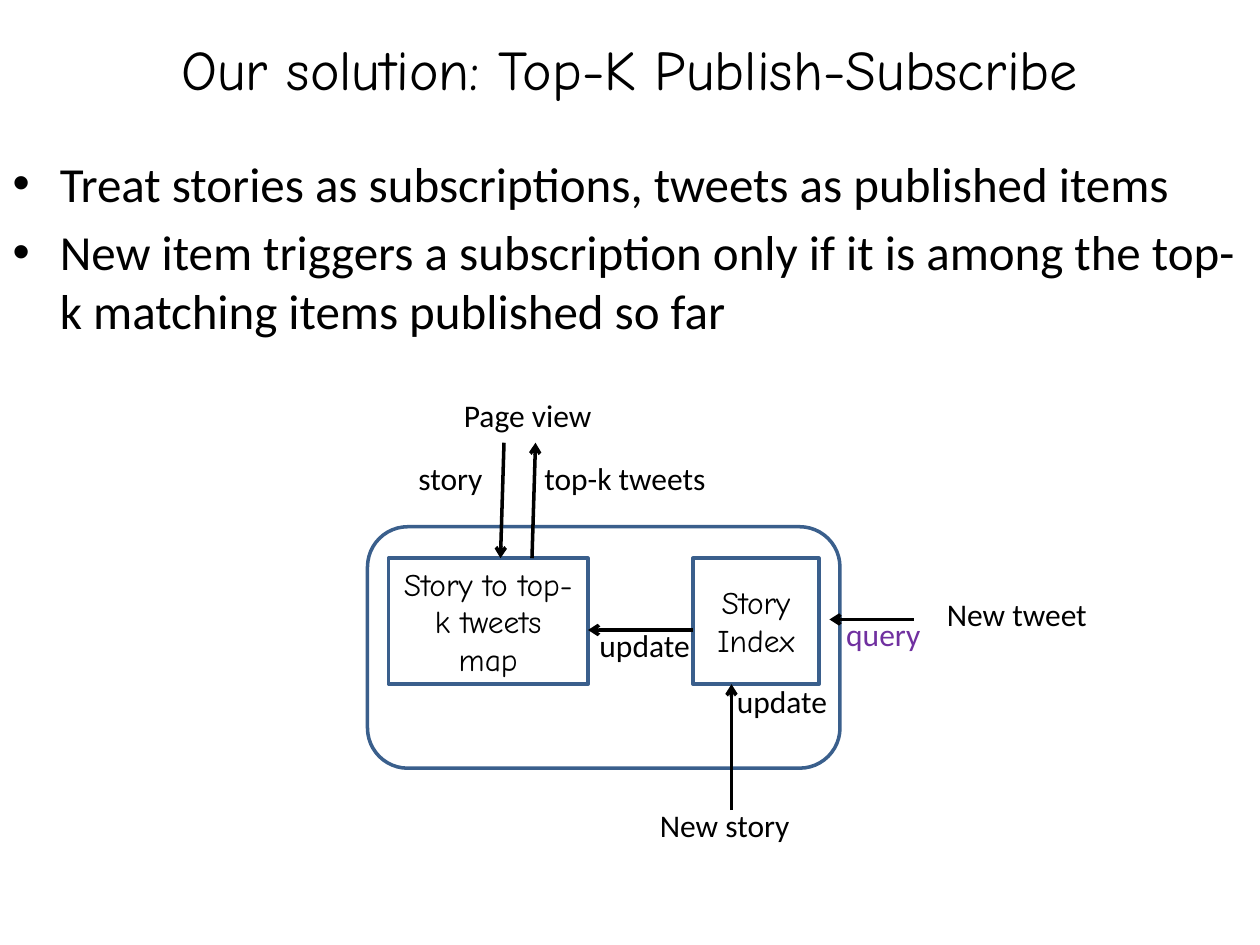
from typing import NamedTuple

from lxml import etree
from pptx import Presentation
from pptx.dml.color import RGBColor
from pptx.enum.shapes import MSO_CONNECTOR, MSO_SHAPE
from pptx.enum.text import MSO_ANCHOR, MSO_AUTO_SIZE, PP_ALIGN
from pptx.oxml.ns import qn
from pptx.util import Pt

BLACK = RGBColor(0x00, 0x00, 0x00)
BLUE = RGBColor(0x3A, 0x5F, 0x8C)
PURPLE = RGBColor(0x70, 0x30, 0xA0)
SANS = "Calibri"
COMIC = "Comic Neue"
ROUNDED, RECTANGLE = MSO_SHAPE.ROUNDED_RECTANGLE, MSO_SHAPE.RECTANGLE
STRAIGHT = MSO_CONNECTOR.STRAIGHT
CENTER, LEFT = PP_ALIGN.CENTER, PP_ALIGN.LEFT
MIDDLE = MSO_ANCHOR.MIDDLE
FIT_SHAPE = MSO_AUTO_SIZE.SHAPE_TO_FIT_TEXT
NO_FIT = MSO_AUTO_SIZE.NONE

SLIDE_WIDTH, SLIDE_HEIGHT = 720, 540
TITLE_HEIGHT = 78
BODY_TOP = 84
LINE_WIDTH = 2
DIAGRAM_TEXT_SIZE = 18
LABEL_HEIGHT = 29


class Box(NamedTuple):
    kind: MSO_SHAPE
    left: float
    top: float
    width: float
    height: float
    text: str = ""


class Arrow(NamedTuple):
    """A line with its arrowhead at the end point."""
    x1: float
    y1: float
    x2: float
    y2: float


class Label(NamedTuple):
    text: str
    left: float
    top: float
    width: float
    color: RGBColor = BLACK


TITLE = "Our solution: Top-K Publish-Subscribe"
POINTS = (
    "Treat stories as subscriptions, tweets as published items\n"
    "New item triggers a subscription only if it is among the "
    "top-k matching items published so far"
)
BOXES = [
    Box(ROUNDED, 210, 301, 270, 138),
    Box(RECTANGLE, 222, 319, 114, 72, "Story to top-k tweets map"),
    Box(RECTANGLE, 396, 319, 72, 72, "Story\nIndex"),
]
ARROWS = [
    Arrow(288, 253, 286, 319),
    Arrow(304, 319, 306, 253),
    Arrow(522, 354, 474, 354),
    Arrow(396, 360, 336, 360),
    Arrow(418, 463, 418, 391),
]
LABELS = [
    Label("Page view", 258, 223, 88.5),
    Label("story", 232, 259, 52),
    Label("top-k tweets", 304, 259, 108.5),
    Label("New tweet", 534, 336.5, 96),
    Label("query", 476.5, 348, 57.5, PURPLE),
    Label("update", 335.5, 354, 67),
    Label("update", 414, 386, 67),
    Label("New story", 370, 457, 89.5),
]


def style_text(frame, font: str, size: float, color: RGBColor, align: PP_ALIGN) -> None:
    for paragraph in frame.paragraphs:
        paragraph.alignment = align
        for run in paragraph.runs:
            run.font.name = font
            run.font.size = Pt(size)
            run.font.color.rgb = color


def place(shape, left: float, top: float, width: float, height: float) -> None:
    shape.left, shape.top = Pt(left), Pt(top)
    shape.width, shape.height = Pt(width), Pt(height)


def fill_placeholders(slide) -> None:
    title, body = slide.placeholders
    place(title, 0, 0, SLIDE_WIDTH, TITLE_HEIGHT)
    title.text_frame.text = TITLE
    title.text_frame.vertical_anchor = MIDDLE
    style_text(title.text_frame, COMIC, 32, BLACK, CENTER)

    place(body, 0, BODY_TOP, SLIDE_WIDTH, SLIDE_HEIGHT - BODY_TOP)
    body.text_frame.text = POINTS
    body.text_frame.auto_size = NO_FIT
    style_text(body.text_frame, SANS, 28, BLACK, LEFT)


def draw_box(slide, box: Box) -> None:
    shape = slide.shapes.add_shape(
        box.kind, Pt(box.left), Pt(box.top), Pt(box.width), Pt(box.height))
    shape.shadow.inherit = False
    shape.fill.background()
    shape.line.color.rgb = BLUE
    shape.line.width = Pt(LINE_WIDTH)
    if box.text:
        shape.text_frame.text = box.text
        shape.text_frame.word_wrap = True
        shape.text_frame.vertical_anchor = MIDDLE
        style_text(shape.text_frame, COMIC, DIAGRAM_TEXT_SIZE, BLACK, CENTER)


def draw_arrow(slide, arrow: Arrow) -> None:
    connector = slide.shapes.add_connector(STRAIGHT, *map(Pt, arrow))
    connector.line.color.rgb = BLACK
    connector.line.width = Pt(LINE_WIDTH)
    etree.SubElement(connector.line._get_or_add_ln(), qn("a:tailEnd"), type="arrow")
    etree.SubElement(connector._element.spPr, qn("a:effectLst"))


def draw_label(slide, label: Label) -> None:
    textbox = slide.shapes.add_textbox(
        Pt(label.left), Pt(label.top), Pt(label.width), Pt(LABEL_HEIGHT))
    frame = textbox.text_frame
    frame.text = label.text
    frame.word_wrap = False
    frame.auto_size = FIT_SHAPE
    style_text(frame, SANS, DIAGRAM_TEXT_SIZE, label.color, LEFT)


def main() -> None:
    presentation = Presentation()
    presentation.slide_width = Pt(SLIDE_WIDTH)
    presentation.slide_height = Pt(SLIDE_HEIGHT)
    slide = presentation.slides.add_slide(presentation.slide_layouts[1])
    fill_placeholders(slide)
    for box in BOXES:
        draw_box(slide, box)
    for arrow in ARROWS:
        draw_arrow(slide, arrow)
    for label in LABELS:
        draw_label(slide, label)
    presentation.save("out.pptx")


if __name__ == "__main__":
    main()
